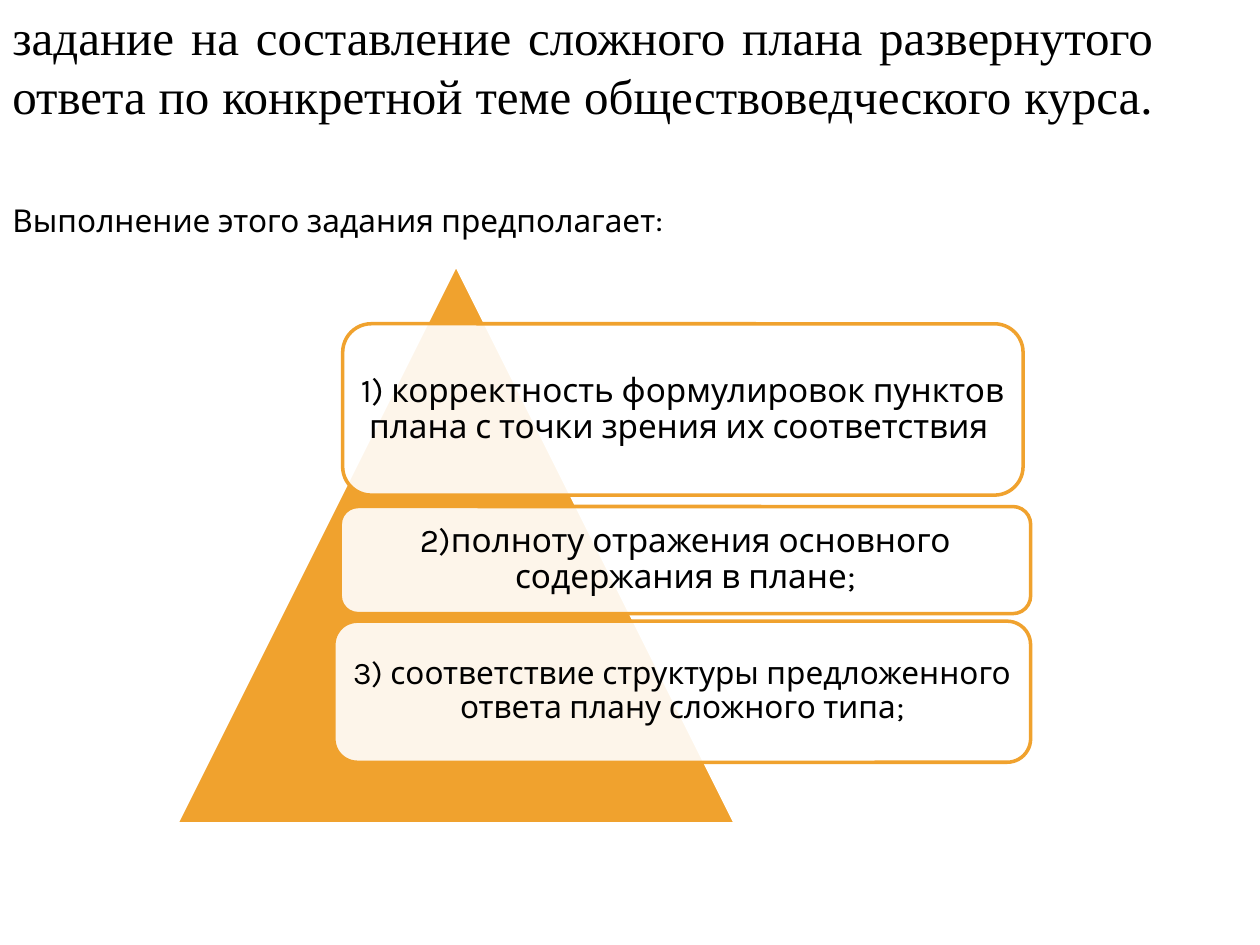
from lxml.etree import SubElement
from pptx import Presentation
from pptx.dml.color import RGBColor
from pptx.enum.shapes import MSO_SHAPE
from pptx.enum.text import MSO_ANCHOR, PP_ALIGN
from pptx.oxml.ns import qn
from pptx.util import Inches, Pt

COLORS = {"orange": "F0A22E", "white": "FFFFFF", "black": "000000"}


def style_text(para, font_name, size):
    for span in para.runs:
        span.font.name = font_name
        span.font.size = Pt(size)
        span.font.color.rgb = RGBColor.from_string(COLORS["black"])


def add_figure(kind, left, top, width, height, fill, line):
    figure = page.shapes.add_shape(kind, Inches(left), Inches(top), Inches(width), Inches(height))
    figure.shadow.inherit = False
    figure.fill.solid()
    figure.fill.fore_color.rgb = RGBColor.from_string(COLORS[fill])
    figure.line.color.rgb = RGBColor.from_string(COLORS[line])
    figure.line.width = Pt(2)
    return figure


deck = Presentation()
deck.slide_width = Inches(10)
deck.slide_height = Inches(7.5)
page = deck.slides.add_slide(deck.slide_layouts[6])

intro = page.shapes.add_textbox(Inches(0), Inches(0), Inches(9.25), Inches(1.95))
intro.text_frame.word_wrap = True
task = intro.text_frame.paragraphs[0]
task.text = "задание на составление сложного плана развернутого ответа по конкретной теме обществоведческого курса. "
task.alignment = PP_ALIGN.JUSTIFY
style_text(task, "Times New Roman", 28)
lead = intro.text_frame.add_paragraph()
lead.text = "Выполнение этого задания предполагает:"
lead.space_before = Pt(44)
style_text(lead, "Karla", 18)

add_figure(MSO_SHAPE.ISOSCELES_TRIANGLE, 1.4, 2.1, 4.44, 4.44, "orange", "white")

requirements = [
    (2.72, 2.57, 5.4, 1.36, 19, "1) корректность формулировок пунктов плана с точки зрения их соответствия "),
    (2.7, 4.02, 5.48, 0.85, 19, "2)полноту отражения основного содержания в плане;"),
    (2.65, 4.93, 5.53, 1.12, 18, "3) соответствие структуры предложенного ответа плану сложного типа;"),
]
for left, top, width, height, size, wording in requirements:
    box = add_figure(MSO_SHAPE.ROUNDED_RECTANGLE, left, top, width, height, "white", "orange")
    tint = box.fill._xPr.find(qn("a:solidFill"))[0]
    SubElement(tint, qn("a:alpha")).set("val", "90000")
    frame = box.text_frame
    frame.word_wrap = True
    frame.vertical_anchor = MSO_ANCHOR.MIDDLE
    frame.margin_left = frame.margin_right = Inches(0.02)
    frame.margin_top = frame.margin_bottom = Inches(0.02)
    para = frame.paragraphs[0]
    para.text = wording
    para.alignment = PP_ALIGN.CENTER
    para.line_spacing = 0.9
    style_text(para, "Karla", size)

deck.save("out.pptx")
